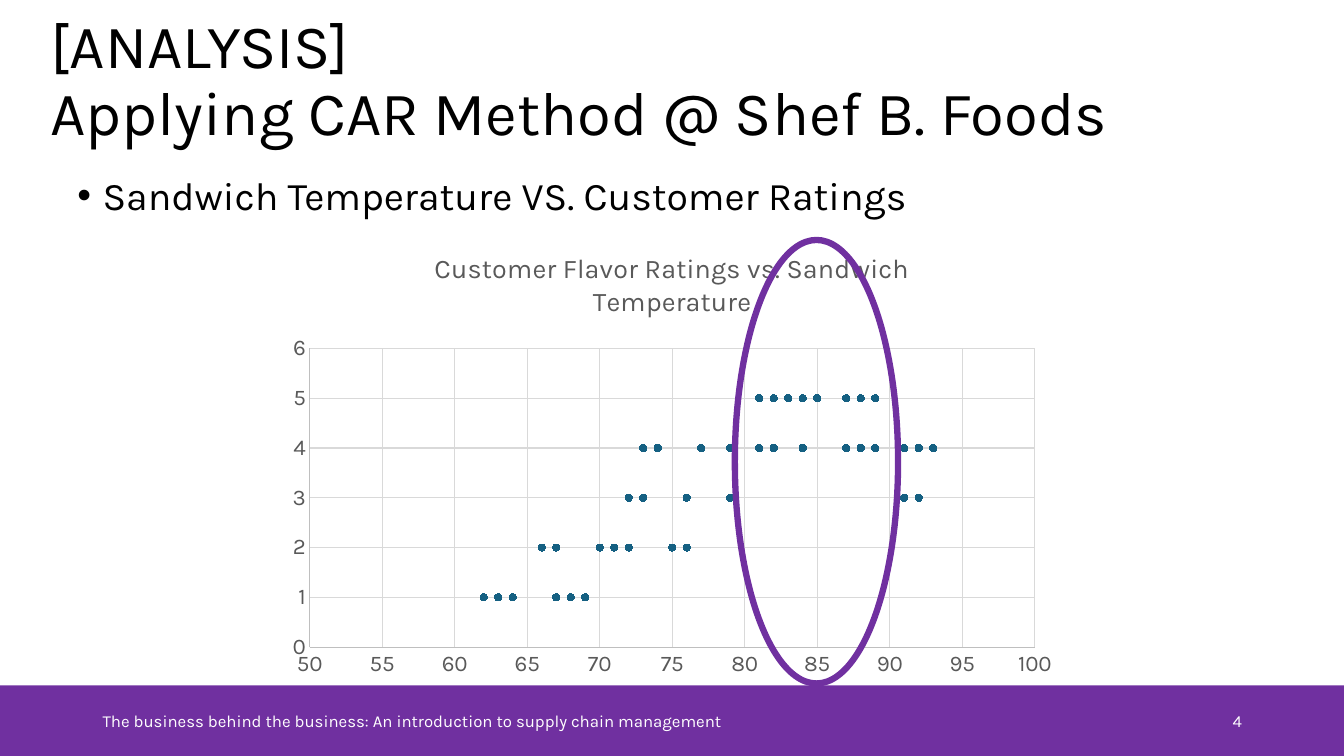
import lxml.etree
import pptx
import pptx.chart.data
import pptx.dml.color
import pptx.enum.chart
import pptx.enum.shapes
import pptx.enum.text
import pptx.oxml.ns
import pptx.util

Pt = pptx.util.Pt
qn = pptx.oxml.ns.qn
SHAPE = pptx.enum.shapes.MSO_SHAPE
ALIGN = pptx.enum.text.PP_ALIGN
ANCHOR = pptx.enum.text.MSO_ANCHOR
FONT = "Karla"
PURPLE = "7030A0"

TEMPS = [67, 72, 62, 68, 69, 63, 70, 68, 64, 76, 88, 71, 67, 75, 66, 91,
         79, 81, 73, 76, 73, 93, 87, 89, 73, 92, 72, 77, 74, 87, 93, 79,
         92, 84, 91, 81, 82, 93, 89, 89, 82, 84, 85, 83, 88, 89, 87, 84]
RATINGS = [1, 2, 1, 1, 1, 1, 2, 1, 1, 2, 4, 2, 2, 2, 2, 3,
           3, 4, 3, 3, 3, 4, 4, 5, 4, 4, 3, 4, 4, 4, 4, 4,
           3, 4, 4, 5, 4, 4, 5, 5, 5, 5, 5, 5, 5, 4, 5, 5]


def rgb(value):
    return pptx.dml.color.RGBColor.from_string(value)


def set_font(font, size, color):
    font.name = FONT
    font.size = Pt(size)
    font.bold = False
    font.color.rgb = rgb(color)


def place(shape, box):
    shape.left, shape.top, shape.width, shape.height = map(Pt, box)


def fill_text(shape, text, size, color, anchor, align=ALIGN.LEFT, space=1.0):
    frame = shape.text_frame
    frame.word_wrap = True
    frame.auto_size = pptx.enum.text.MSO_AUTO_SIZE.NONE
    frame.vertical_anchor = anchor
    para = frame.paragraphs[0]
    para.text = text
    para.alignment = align
    para.line_spacing = space
    for run in para.runs:
        set_font(run.font, size, color)
    return para


def add_text(slide, box, *args, **more):
    shape = slide.shapes.add_textbox(*map(Pt, box))
    return fill_text(shape, *args, **more)


def add_bullet(para, indent):
    props = para._p.get_or_add_pPr()
    props.set("marL", str(Pt(indent)))
    props.set("indent", str(-Pt(indent)))
    lxml.etree.SubElement(props, qn("a:buFont"), typeface="Arial")
    lxml.etree.SubElement(props, qn("a:buChar"), char="•")


def add_form(slide, kind, box, fill=None, line=None, width=0):
    shape = slide.shapes.add_shape(kind, *map(Pt, box))
    shape.shadow.inherit = False
    if fill:
        shape.fill.solid()
        shape.fill.fore_color.rgb = rgb(fill)
    else:
        shape.fill.background()
    if line:
        shape.line.color.rgb = rgb(line)
        shape.line.width = Pt(width)
    else:
        shape.line.fill.background()


def style_axis(axis, low, high, step):
    axis.minimum_scale, axis.maximum_scale = low, high
    axis.major_unit = step
    axis.major_tick_mark = pptx.enum.chart.XL_TICK_MARK.NONE
    axis.minor_tick_mark = pptx.enum.chart.XL_TICK_MARK.NONE
    axis.has_major_gridlines = True
    set_font(axis.tick_labels.font, 16, "595959")
    for line, color in ((axis.format.line, "BFBFBF"),
                        (axis.major_gridlines.format.line, "D9D9D9")):
        line.color.rgb = rgb(color)
        line.width = Pt(0.75)


def set_plot_box(chart, box):
    area = chart._chartSpace.chart.plotArea
    for old in area.findall(qn("c:layout")):
        area.remove(old)
    layout = lxml.etree.Element(qn("c:layout"))
    area.insert(0, layout)
    manual = lxml.etree.SubElement(layout, qn("c:manualLayout"))
    parts = [("layoutTarget", "inner"), ("xMode", "edge"), ("yMode", "edge")]
    parts += zip("xywh", box)
    for name, value in parts:
        lxml.etree.SubElement(manual, qn("c:" + name), val=str(value))


def add_scatter(slide, box, title):
    data = pptx.chart.data.XyChartData()
    points = data.add_series("Series 1")
    for temp, rating in zip(TEMPS, RATINGS):
        points.add_data_point(temp, rating)
    kind = pptx.enum.chart.XL_CHART_TYPE.XY_SCATTER
    chart = slide.shapes.add_chart(kind, *map(Pt, box), data).chart
    set_font(chart.font, 16, "000000")
    chart.has_legend = False
    chart.has_title = True
    chart.chart_title.include_in_layout = False
    para = chart.chart_title.text_frame.paragraphs[0]
    para.text = title
    set_font(para.runs[0].font, 19.2, "595959")
    style_axis(chart.category_axis, 50, 100, 5)
    style_axis(chart.value_axis, 0, 6, 1)
    set_plot_box(chart, (0.04, 0.26, 0.92, 0.66))
    plot = chart.plots[0]
    plot.vary_by_categories = False
    series = plot.series[0]
    series.smooth = False
    series.format.line.fill.background()
    marker = series.marker
    marker.style = pptx.enum.chart.XL_MARKER_STYLE.CIRCLE
    marker.size = 5
    marker.format.fill.solid()
    marker.format.fill.fore_color.rgb = rgb("156082")
    marker.format.line.color.rgb = rgb("156082")


def main():
    deck = pptx.Presentation()
    deck.slide_width, deck.slide_height = Pt(960), Pt(540)
    slide = deck.slides.add_slide(deck.slide_layouts[5])
    add_form(slide, SHAPE.RECTANGLE, (0, 489.6, 960, 50.4), fill=PURPLE)
    title = slide.shapes.title
    place(title, (28.8, 6.5, 828, 104.4))
    fill_text(title, "[ANALYSIS]\vApplying CAR Method @ Shef B. Foods",
              44, "000000", ANCHOR.MIDDLE, space=0.9)
    point = add_text(slide, (48.2, 122.4, 828, 42.5),
                     "Sandwich Temperature VS. Customer Ratings",
                     28, "000000", ANCHOR.TOP, space=0.9)
    point.space_before = Pt(10)
    add_bullet(point, 18)
    add_text(slide, (66.2, 500.4, 576, 28.8),
             "The business behind the business: "
             "An introduction to supply chain management",
             12, "FFFFFF", ANCHOR.MIDDLE)
    add_text(slide, (678.2, 500.4, 216, 28.8), "4",
             12, "FFFFFF", ANCHOR.MIDDLE, align=ALIGN.RIGHT)
    add_scatter(slide, (198.7, 164.9, 563, 323.3),
                "Customer Flavor Ratings vs. Sandwich Temperature")
    add_form(slide, SHAPE.OVAL, (524.9, 171.4, 116.6, 316.8),
             line=PURPLE, width=4.5)
    deck.save("out.pptx")


if __name__ == "__main__":
    main()
